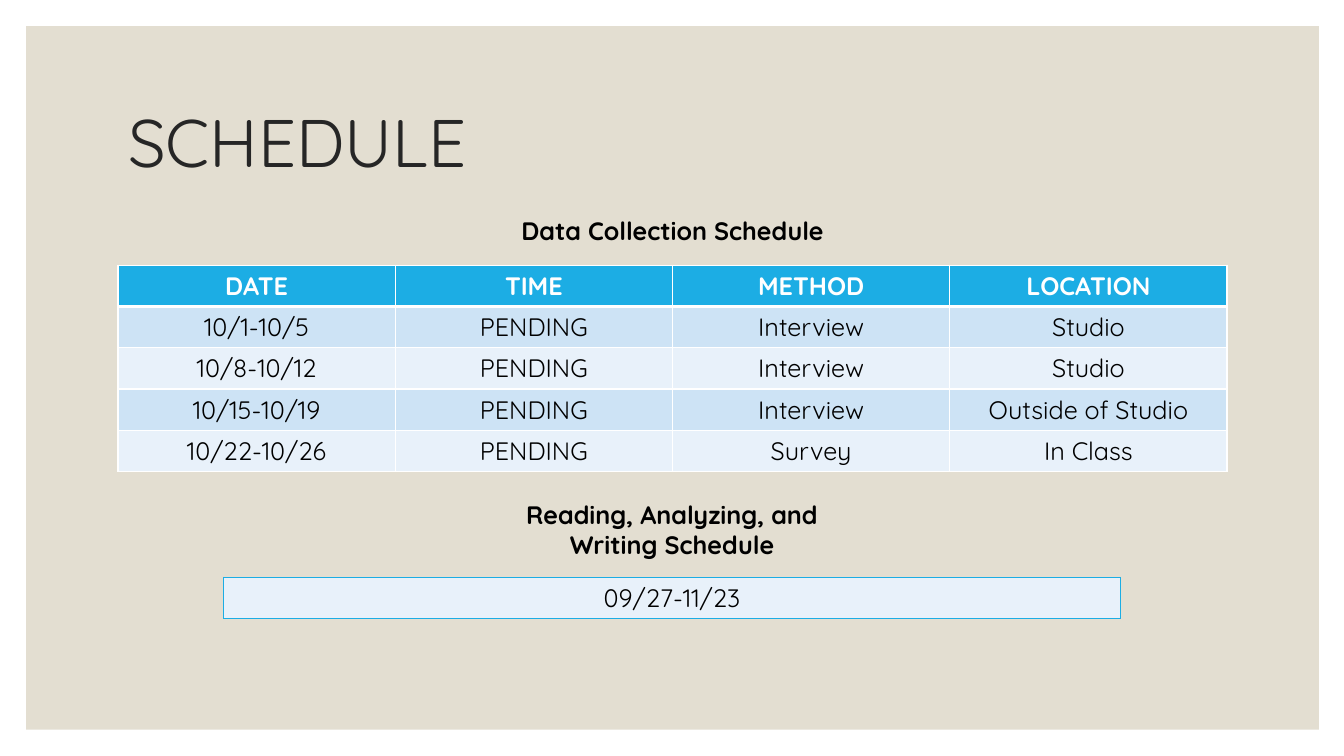
from dataclasses import dataclass

from lxml.etree import SubElement
from pptx import Presentation
from pptx.dml.color import RGBColor
from pptx.enum.shapes import MSO_SHAPE
from pptx.enum.text import MSO_ANCHOR, PP_ALIGN
from pptx.oxml.ns import qn
from pptx.slide import Slide
from pptx.table import _Cell
from pptx.text.text import TextFrame
from pptx.util import Inches, Pt

FONT = "Quicksand"
WHITE = RGBColor(0xFF, 0xFF, 0xFF)
BLACK = RGBColor(0x00, 0x00, 0x00)
CHARCOAL = RGBColor(0x26, 0x26, 0x26)
SAND = RGBColor(0xE3, 0xDE, 0xD1)
BLUE = RGBColor(0x1C, 0xAD, 0xE4)
BAND_DARK = RGBColor(0xCD, 0xE3, 0xF5)
BAND_LIGHT = RGBColor(0xE8, 0xF1, 0xFA)
ROW_HEIGHT = 0.41


@dataclass
class Heading:
    text: str
    left: float
    top: float
    width: float
    height: float


@dataclass
class Schedule:
    rows: list[list[str]]
    left: float
    top: float
    width: float
    border: RGBColor
    has_header: bool


HEADINGS = [
    Heading("Data Collection Schedule", 4.86, 2.09, 3.62, 0.4),
    Heading("Reading, Analyzing, and Writing Schedule", 4.67, 4.9, 3.99, 0.71),
]

SCHEDULES = [
    Schedule(
        [
            ["DATE", "TIME", "METHOD", "LOCATION"],
            ["10/1-10/5", "PENDING", "Interview", "Studio"],
            ["10/8-10/12", "PENDING", "Interview", "Studio"],
            ["10/15-10/19", "PENDING", "Interview", "Outside of Studio"],
            ["10/22-10/26", "PENDING", "Survey", "In Class"],
        ],
        1.17, 2.63, 11, WHITE, True,
    ),
    Schedule([["09/27-11/23"]], 2.22, 5.73, 8.89, BLUE, False),
]


def write(frame: TextFrame, text: str, size: float, color: RGBColor,
          bold: bool = False, align: PP_ALIGN = PP_ALIGN.CENTER) -> None:
    frame.text = text
    paragraph = frame.paragraphs[0]
    paragraph.alignment = align
    font = paragraph.runs[0].font
    font.name, font.size, font.bold = FONT, Pt(size), bold
    font.color.rgb = color


def set_border(cell: _Cell, side: str, color: RGBColor, width: float) -> None:
    properties = cell._tc.get_or_add_tcPr()
    line = SubElement(properties, qn(f"a:ln{side}"), w=str(Pt(width)))
    fill = SubElement(line, qn("a:solidFill"))
    SubElement(fill, qn("a:srgbClr"), val=str(color))


def add_heading(slide: Slide, heading: Heading) -> None:
    box = slide.shapes.add_textbox(Inches(heading.left), Inches(heading.top),
                                   Inches(heading.width), Inches(heading.height))
    box.text_frame.word_wrap = True
    write(box.text_frame, heading.text, 18, BLACK, bold=True)


def add_schedule(slide: Slide, schedule: Schedule) -> None:
    rows = schedule.rows
    table = slide.shapes.add_table(
        len(rows), len(rows[0]), Inches(schedule.left), Inches(schedule.top),
        Inches(schedule.width), Inches(ROW_HEIGHT * len(rows))).table
    table.first_row = schedule.has_header
    table.horz_banding = schedule.has_header
    for r, row in enumerate(rows):
        is_header = schedule.has_header and r == 0
        band = BLUE if is_header else BAND_DARK if r % 2 else BAND_LIGHT
        for c, text in enumerate(row):
            cell = table.cell(r, c)
            for side in "LRTB":
                # A thick rule parts the header from the first row
                thick = (is_header and side == "B") or (
                    schedule.has_header and r == 1 and side == "T")
                set_border(cell, side, schedule.border, 3 if thick else 1)
            cell.fill.solid()
            cell.fill.fore_color.rgb = band
            write(cell.text_frame, text, 18, WHITE if is_header else BLACK,
                  bold=is_header)


def main() -> None:
    presentation = Presentation()
    presentation.slide_width, presentation.slide_height = Inches(13.33), Inches(7.5)
    slide = presentation.slides.add_slide(presentation.slide_layouts[5])
    title = slide.shapes.title

    # Sand panel, placed behind the title
    panel = slide.shapes.add_shape(MSO_SHAPE.RECTANGLE, Inches(0.26), Inches(0.26),
                                   Inches(12.82), Inches(6.98))
    panel.shadow.inherit = False
    panel.fill.solid()
    panel.fill.fore_color.rgb = SAND
    panel.line.fill.background()
    title._element.addprevious(panel._element)

    # Title
    title.left, title.top = Inches(1.17), Inches(0.7)
    title.width, title.height = Inches(11), Inches(1.5)
    title.text_frame.vertical_anchor = MSO_ANCHOR.MIDDLE
    write(title.text_frame, "SCHEDULE", 48, CHARCOAL, align=PP_ALIGN.LEFT)
    title.text_frame.paragraphs[0].line_spacing = 0.9

    # Schedules with their headings
    for heading, schedule in zip(HEADINGS, SCHEDULES):
        add_heading(slide, heading)
        add_schedule(slide, schedule)

    presentation.save("out.pptx")


if __name__ == "__main__":
    main()
